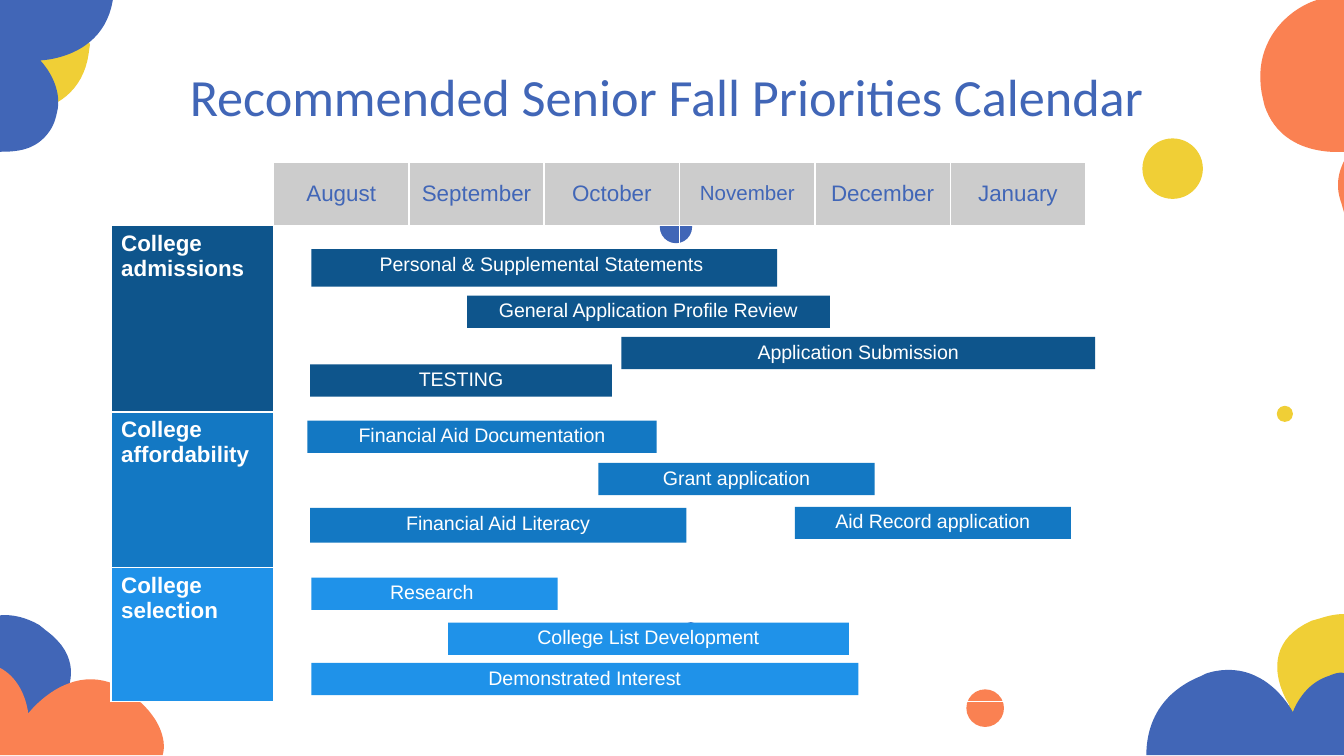
import pptx
import pptx.dml.color
import pptx.enum.shapes
import pptx.enum.text
import pptx.oxml
import pptx.oxml.ns
import pptx.util

Cm = pptx.util.Cm
Pt = pptx.util.Pt
ALIGN = pptx.enum.text.PP_ALIGN
ANCHOR = pptx.enum.text.MSO_ANCHOR
SHAPE = pptx.enum.shapes.MSO_SHAPE

COLORS = {
    "blue": "4166B7", "yellow": "F0CF36", "orange": "FA8152",
    "white": "FFFFFF", "header": "CCCCCC",
    "admissions": "0E558C", "affordability": "1378C3", "selection": "1F92E9",
}
MARGINS = {"margin_left": Cm(0.19), "margin_right": Cm(0.19),
           "margin_top": Cm(0.1), "margin_bottom": Cm(0.1)}
WIDTH, HEIGHT = 25.4, 14.29
LABEL_WIDTH = 3.07
ROW_HEIGHTS = [1.2, 3.53, 2.94, 2.53]
MONTHS = ["August", "September", "October", "November", "December", "January"]

PETALS = [
    ("yellow", (10, 4.57), [(9.95, 4.57, 9.89, 4.58, 9.83, 4.6), (9.76, 4.62),
                            (9.31, 4.82, 9.59, 5.24, 9.59, 5.24), (9.62, 5.4), (10, 5.4)]),
    ("blue", (8.53, 5.62), [(8.53, 5.38, 8.64, 5.15, 8.94, 5.03), (8.98, 5.01),
                            (9.41, 4.88, 9.62, 5.3, 9.62, 5.3),
                            (9.62, 5.3, 9.69, 5.09, 9.89, 5.03),
                            (9.93, 5.01, 9.98, 5, 10, 5.01), (10, 5.62)]),
    ("blue", (0, 4.58), [(0.1, 4.57, 0.2, 4.6, 0.29, 4.65), (0.34, 4.69),
                         (0.74, 4.98, 0.38, 5.33, 0.38, 5.33), (0, 5.33)]),
    ("orange", (0, 4.97), [(0.19, 5.07, 0.21, 5.31, 0.21, 5.31),
                           (0.21, 5.31, 0.52, 4.9, 0.91, 5.12), (0.95, 5.15),
                           (1.21, 5.33, 1.24, 5.53, 1.21, 5.62), (0, 5.62)]),
    ("yellow", (0, 0.2), [(0.6, 0.2), (0.67, 0.33), (0.66, 0.4),
                          (0.6, 0.83, 0.14, 0.9, 0, 0.76)]),
    ("blue", (0, 0), [(0.84, 0), (0.77, 0.44, 0.3, 0.45, 0.3, 0.45),
                      (0.3, 0.45, 0.46, 0.61, 0.43, 0.81),
                      (0.42, 0.86, 0.41, 0.91, 0.38, 0.96),
                      (0.28, 1.12, 0.13, 1.13, 0, 1.13)]),
    ("orange", (9.8, 0), [(9.6, 0.06, 9.29, 0.31, 9.4, 0.75), (9.41, 0.79),
                          (9.52, 1.11, 9.84, 1.14, 10, 1.13), (10, 0)]),
    ("orange", (10, 1.2), [(9.95, 1.3, 9.94, 1.4, 9.98, 1.51), (10, 1.58)]),
]
DOTS = [
    ("blue", 4.91, 1.57, 0.24), ("blue", 5.08, 4.63, 0.12), ("yellow", 8.5, 1.03, 0.45),
    ("yellow", 9.5, 3.02, 0.12), ("orange", 7.19, 5.13, 0.28),
]
BARS = [
    ("admissions", "Personal & Supplemental Statements ", 0.28, 3.44, 1.65, 0.71),
    ("admissions", "General Application Profile Review", 1.43, 2.68, 2.53, 0.61),
    ("admissions", "Application Submission", 2.57, 3.5, 3.31, 0.61),
    ("admissions", "TESTING", 0.27, 2.23, 3.83, 0.61),
    ("affordability", "Financial Aid Documentation", 0.25, 2.58, 4.89, 0.61),
    ("affordability", "Grant application", 2.4, 2.04, 5.69, 0.61),
    ("affordability", "Financial Aid Literacy", 0.27, 2.78, 6.54, 0.66),
    ("affordability", "Aid Record application", 3.85, 2.04, 6.52, 0.61),
    ("selection", "Research ", 0.28, 1.82, 7.86, 0.61),
    ("selection", "College List Development", 1.29, 2.96, 8.71, 0.61),
    ("selection", "Demonstrated Interest", 0.28, 4.04, 9.47, 0.61),
]


def rgb(name):
    """Return the named colour."""
    return pptx.dml.color.RGBColor.from_string(COLORS[name])


def apply(target, values):
    """Set attributes from a dict of format values."""
    for name, value in values.items():
        setattr(target, name, value)


def fill(target, color):
    """Give a shape or cell a flat fill."""
    target.fill.solid()
    target.fill.fore_color.rgb = rgb(color)


def paint(shape, color):
    """Give a shape a flat fill with no line or shadow."""
    shape.shadow.inherit = False
    fill(shape, color)
    shape.line.fill.background()


def write(frame, text, color, font, layout):
    """Write one formatted paragraph into a text frame."""
    para = frame.paragraphs[0]
    apply(para, layout)
    span = para.add_run()
    span.text = text
    apply(span.font, font)
    span.font.color.rgb = rgb(color)


def trace(start, segments, steps=24):
    """Turn lines and cubic curves into a list of points."""
    points = [start]
    for segment in segments:
        if len(segment) == 2:
            points.append(segment)
            continue
        corners = [points[-1], segment[:2], segment[2:4], segment[4:]]
        for step in range(1, steps + 1):
            t = step / steps
            weights = [(1 - t) ** 3, 3 * t * (1 - t) ** 2, 3 * t * t * (1 - t), t ** 3]
            points.append(tuple(sum(w * corner[axis] for w, corner in zip(weights, corners))
                                for axis in (0, 1)))
    return points


def add_decoration(page, box):
    """Draw the corner petals and loose dots in units of a tenth of the box width."""
    left, top, width, height = box
    unit = width / 10
    for color, start, segments in PETALS:
        points = [(Cm(left + x * unit), Cm(top + y * unit)) for x, y in trace(start, segments)]
        builder = page.shapes.build_freeform(*points[0])
        builder.add_line_segments(points[1:], close=True)
        paint(builder.convert_to_shape(), color)
    for color, x, y, size in DOTS:
        dot = page.shapes.add_shape(SHAPE.OVAL, Cm(left + x * unit), Cm(top + y * unit),
                                    Cm(size * unit), Cm(size * unit))
        paint(dot, color)


def add_title(page, box):
    """Place the centred slide title."""
    frame = page.shapes.add_textbox(*map(Cm, box)).text_frame
    apply(frame, {"word_wrap": True, "vertical_anchor": ANCHOR.MIDDLE})
    write(frame, "Recommended Senior Fall Priorities Calendar ", "blue",
          {"name": "Calibri", "size": Pt(28)}, {"alignment": ALIGN.CENTER})


def add_borders(cell):
    """Draw thin white borders around a cell."""
    properties = cell._tc.get_or_add_tcPr()
    for index, side in enumerate(("lnL", "lnR", "lnT", "lnB")):
        properties.insert(index, pptx.oxml.parse_xml(
            f'<a:{side} {pptx.oxml.ns.nsdecls("a")} w="12700"><a:solidFill>'
            f'<a:srgbClr val="{COLORS["white"]}"/></a:solidFill></a:{side}>'))


def add_calendar(page, box):
    """Place the month table with its labelled rows."""
    left, top, width, height = box
    table = page.shapes.add_table(len(ROW_HEIGHTS), len(MONTHS) + 1, *map(Cm, box)).table
    apply(table, {"first_row": False, "horz_banding": False})
    month_width = (width - LABEL_WIDTH) / len(MONTHS)
    for index, column in enumerate(table.columns):
        column.width = Cm(month_width if index else LABEL_WIDTH)
    for row, row_height in zip(table.rows, ROW_HEIGHTS):
        row.height = Cm(row_height)
    for cell in table.iter_cells():
        cell.fill.background()
        apply(cell, MARGINS)
        add_borders(cell)
    fill(table.cell(0, 0), "white")
    for index, month in enumerate(MONTHS, 1):
        cell = table.cell(0, index)
        fill(cell, "header")
        cell.vertical_anchor = ANCHOR.MIDDLE
        write(cell.text_frame, month, "blue",
              {"name": "Arial", "size": Pt(11 if month == "November" else 12)},
              {"alignment": ALIGN.CENTER})
    for index, topic in enumerate(("admissions", "affordability", "selection"), 1):
        cell = table.cell(index, 0)
        fill(cell, topic)
        write(cell.text_frame, f"College {topic}", "white",
              {"name": "Arial", "size": Pt(12), "bold": True}, {"alignment": ALIGN.LEFT})


def add_bars(page, box):
    """Place the task bars, with starts and lengths counted in months."""
    left, top, width, height = box
    month_width = (width - LABEL_WIDTH) / len(MONTHS)
    for topic, text, start, length, offset, bar_height in BARS:
        bar = page.shapes.add_shape(
            SHAPE.RECTANGLE, Cm(left + LABEL_WIDTH + start * month_width), Cm(top + offset),
            Cm(length * month_width), Cm(bar_height))
        paint(bar, topic)
        apply(bar.text_frame, {"word_wrap": True, "vertical_anchor": ANCHOR.TOP, **MARGINS})
        write(bar.text_frame, text, "white", {"name": "Arial", "size": Pt(10.5)},
              {"alignment": ALIGN.CENTER, "line_spacing": 0.9})


def main():
    """Build and save the calendar slide."""
    deck = pptx.Presentation()
    apply(deck, {"slide_width": Cm(WIDTH), "slide_height": Cm(HEIGHT)})
    page = deck.slides.add_slide(deck.slide_layouts[6])
    calendar = (2.1, 3.06, 18.42, sum(ROW_HEIGHTS))
    add_decoration(page, (0, 0, WIDTH, HEIGHT))
    add_title(page, (2, 1.0, 21.41, 1.6))
    add_calendar(page, calendar)
    add_bars(page, calendar)
    deck.save("out.pptx")


if __name__ == "__main__":
    main()
